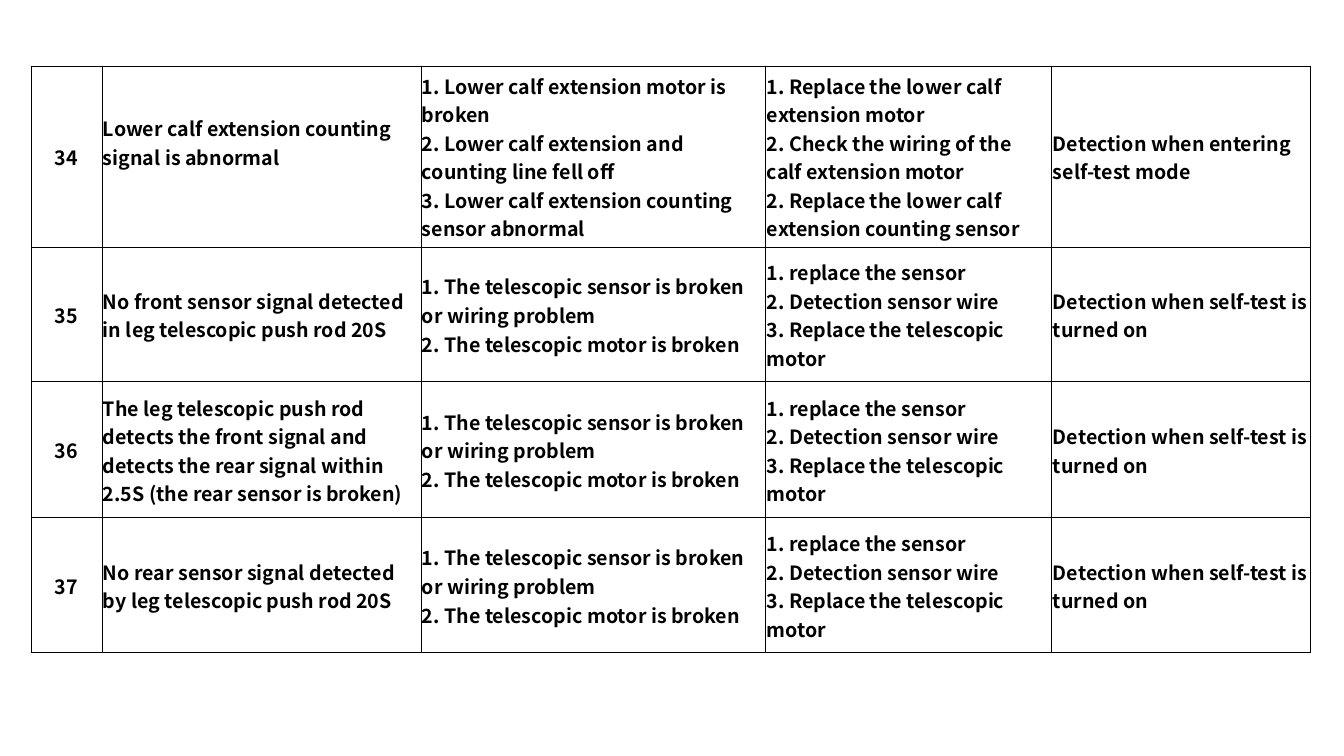
from lxml import etree
from pptx import Presentation
from pptx.dml.color import RGBColor
from pptx.enum.text import MSO_ANCHOR, PP_ALIGN
from pptx.oxml.ns import qn
from pptx.util import Pt

MIDDLE = MSO_ANCHOR.MIDDLE
CENTER, LEFT = PP_ALIGN.CENTER, PP_ALIGN.LEFT
SCALE = 914400 / 100.8
COLORS = {"ink": "000000", "paper": "FFFFFF"}
FONT = "Noto Sans CJK SC"
LINE = 29  # height of one text line in px

COLS = [71, 319, 345, 286, 259]
ROWS = [181, 135, 136, 135]

# \v is a line break inside a paragraph
CAUSES = ("1. The telescopic sensor is broken or wiring problem\v"
          "2. The telescopic motor is broken")
FIXES = ("1. replace the sensor\v2. Detection sensor wire\v"
         "3. Replace the telescopic motor")
WHEN = "Detection when self-test is turned on"
FAULTS = [
    ("34", "Lower calf extension counting signal is abnormal",
     "1. Lower calf extension motor is broken\v"
     "2. Lower calf extension and counting line fell off\v"
     "3. Lower calf extension counting sensor abnormal",
     "1. Replace the lower calf extension motor\v"
     "2. Check the wiring of the calf extension motor\v"
     "2. Replace the lower calf extension counting sensor",
     "Detection when entering self-test mode"),
    ("35", "No front sensor signal detected in leg telescopic push rod 20S",
     CAUSES, FIXES, WHEN),
    ("36", "The leg telescopic push rod detects the front signal and detects "
     "the rear signal within 2.5S (the rear sensor is broken)",
     CAUSES, FIXES, WHEN),
    ("37", "No rear sensor signal detected by leg telescopic push rod 20S",
     CAUSES, FIXES, WHEN),
]


def px(n):
    return round(n * SCALE)


def color(name):
    return RGBColor.from_string(COLORS[name])


def add_border(cell):
    props = cell._tc.get_or_add_tcPr()
    for i, side in enumerate(("lnL", "lnR", "lnT", "lnB")):
        line = etree.Element(qn("a:" + side), w=str(Pt(0.75)))
        fill = etree.SubElement(line, qn("a:solidFill"))
        etree.SubElement(fill, qn("a:srgbClr"), val=COLORS["ink"])
        props.insert(i, line)


def fill_cell(cell, text, align):
    cell.fill.solid()
    cell.fill.fore_color.rgb = color("paper")
    add_border(cell)
    cell.margin_left = cell.margin_right = cell.margin_top = px(1)
    cell.margin_bottom = 0
    cell.vertical_anchor = MIDDLE
    para = cell.text_frame.paragraphs[0]
    para.text = text
    para.alignment = align
    font = para.font
    font.name, font.size, font.bold = FONT, Pt(14), True
    font.color.rgb = color("ink")


def add_faults(slide, left, top):
    frame = slide.shapes.add_table(len(ROWS), len(COLS), px(left), px(top),
                                   px(sum(COLS)), px(sum(ROWS)))
    table = frame.table
    table.first_row = table.horz_banding = False
    for col, width in zip(table.columns, COLS):
        col.width = px(width)
    for row, height, fault in zip(table.rows, ROWS, FAULTS):
        row.height = px(height)
        for i, (cell, text) in enumerate(zip(row.cells, fault)):
            fill_cell(cell, text, LEFT if i else CENTER)
    # The first fault's name sits half a line above the middle
    table.cell(0, 1).margin_bottom = px(LINE)


def main():
    deck = Presentation()
    deck.slide_width, deck.slide_height = px(1344), px(756)
    slide = deck.slides.add_slide(deck.slide_layouts[6])
    add_faults(slide, 31, 66)
    deck.save("out.pptx")


if __name__ == "__main__":
    main()
